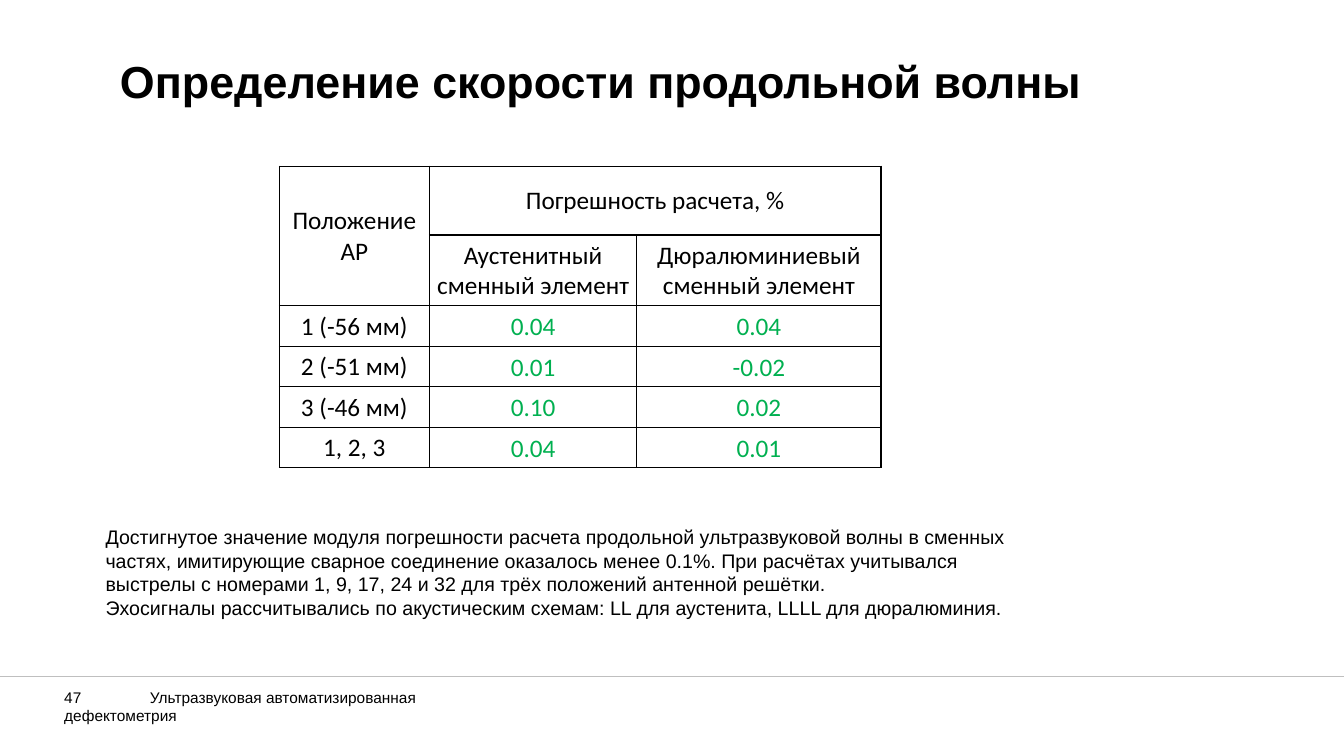
import lxml.etree
import pptx
import pptx.dml.color
import pptx.enum.shapes
import pptx.enum.text
import pptx.oxml.ns
import pptx.util

Cm = pptx.util.Cm
Pt = pptx.util.Pt
Anchor = pptx.enum.text.MSO_ANCHOR
Align = pptx.enum.text.PP_ALIGN
qn = pptx.oxml.ns.qn

BLACK, GREEN, GREY = "000000", "00B050", "BFBFBF"
HEADER_MARGINS = (0.25, 0.13, 0.25, 0.13)
LABEL_MARGINS = (0.03, 0.03, 0.03, 0)
VALUE_MARGINS = (0.18, 0, 0.18, 0)


def color(value):
    return pptx.dml.color.RGBColor.from_string(value)


class SlideBuilder:
    heading_font = "Arial"
    table_font = "Calibri"

    def __init__(self, presentation):
        self.slide = presentation.slides.add_slide(presentation.slide_layouts[5])

    def add_run(self, paragraph, text, size, font, fill=BLACK, bold=False):
        run = paragraph.add_run()
        run.text = text
        run.font.size = Pt(size)
        run.font.name = font
        run.font.bold = bold
        run.font.color.rgb = color(fill)

    def title(self, box, text):
        shape = self.slide.shapes.title
        shape.left, shape.top, shape.width, shape.height = map(Cm, box)
        frame = shape.text_frame
        frame.auto_size = pptx.enum.text.MSO_AUTO_SIZE.NONE
        frame.vertical_anchor = Anchor.BOTTOM
        paragraph = frame.paragraphs[0]
        paragraph.alignment = Align.LEFT
        paragraph.line_spacing = 0.9
        self.add_run(paragraph, text, 32, self.heading_font, bold=True)

    def text(self, box, lines, size, anchor=Anchor.TOP, tab=None):
        frame = self.slide.shapes.add_textbox(*map(Cm, box)).text_frame
        frame.word_wrap = True
        frame.vertical_anchor = anchor
        for index, line in enumerate(lines):
            paragraph = frame.add_paragraph() if index else frame.paragraphs[0]
            if tab:
                properties = paragraph._p.get_or_add_pPr()
                tabs = lxml.etree.SubElement(properties, qn("a:tabLst"))
                lxml.etree.SubElement(tabs, qn("a:tab"), pos=str(Cm(tab)), algn="l")
            self.add_run(paragraph, line, size, self.heading_font)

    def line(self, start, end):
        connector = self.slide.shapes.add_connector(
            pptx.enum.shapes.MSO_CONNECTOR.STRAIGHT, *map(Cm, start + end))
        connector.line.color.rgb = color(GREY)
        connector.line.width = Pt(0.5)
        lxml.etree.SubElement(connector._element.spPr, qn("a:effectLst"))

    def borders(self, cell):
        properties = cell._tc.get_or_add_tcPr()
        for position, side in enumerate(("lnL", "lnR", "lnT", "lnB")):
            border = lxml.etree.Element(qn("a:" + side), w=str(Pt(1)))
            fill = lxml.etree.SubElement(border, qn("a:solidFill"))
            lxml.etree.SubElement(fill, qn("a:srgbClr"), val=BLACK)
            properties.insert(position, border)

    def cell(self, cell, text, margins, fill, spacing):
        cell.fill.background()
        self.borders(cell)
        cell.vertical_anchor = Anchor.MIDDLE
        (cell.margin_left, cell.margin_top,
         cell.margin_right, cell.margin_bottom) = map(Cm, margins)
        paragraph = cell.text_frame.paragraphs[0]
        paragraph.alignment = Align.CENTER
        paragraph.line_spacing = spacing
        if text:
            self.add_run(paragraph, text, 18, self.table_font, fill)

    def table(self, left, top, widths, heights, rows):
        table = self.slide.shapes.add_table(
            len(rows), len(widths), Cm(left), Cm(top),
            Cm(sum(widths)), Cm(sum(heights))).table
        table.first_row = False
        table.horz_banding = False
        for column, width in zip(table.columns, widths):
            column.width = Cm(width)
        for row, height in zip(table.rows, heights):
            row.height = Cm(height)
        for row_index, row in enumerate(rows):
            for column_index, text in enumerate(row):
                is_value = row_index > 1 and column_index > 0
                margins = HEADER_MARGINS if row_index == 0 else LABEL_MARGINS
                self.cell(table.cell(row_index, column_index), text,
                          VALUE_MARGINS if is_value else margins,
                          GREEN if is_value else BLACK,
                          1.07 if is_value else 1.0)
        table.cell(0, 0).merge(table.cell(1, 0))
        table.cell(0, 1).merge(table.cell(0, 2))


def main():
    presentation = pptx.Presentation()
    presentation.slide_width = Cm(33.87)
    presentation.slide_height = Cm(19.05)
    builder = SlideBuilder(presentation)

    builder.text((1.37, 17.65, 12.2, 0.74),
                 ["47\tУльтразвуковая автоматизированная дефектометрия"],
                 11, Anchor.BOTTOM, tab=2.16)
    builder.line((0, 17.04), (33.87, 17.04))
    builder.title((2.77, -0.33, 28.42, 3.18), "Определение скорости продольной волны")
    builder.table(7.04, 4.19, (3.78, 5.23, 6.15), (1.73, 1.45) + (1.02,) * 4, [
        ("Положение АР", "Погрешность расчета, %", ""),
        ("", "Аустенитный сменный элемент", "Дюралюминиевый сменный элемент"),
        ("1 (-56 мм)", "0.04", "0.04"),
        ("2 (-51 мм)", "0.01", "-0.02"),
        ("3 (-46 мм)", "0.10", "0.02"),
        ("1, 2, 3", "0.04", "0.01"),
    ])
    builder.text((2.41, 13.11, 24, 4.93), [
        "Достигнутое значение модуля погрешности расчета продольной ультразвуковой "
        "волны в сменных частях, имитирующие сварное соединение оказалось менее 0.1%. "
        "При расчётах учитывался выстрелы с номерами 1, 9, 17, 24 и 32 для трёх "
        "положений антенной решётки.",
        "Эхосигналы рассчитывались по акустическим схемам: LL для аустенита, "
        "LLLL для дюралюминия.",
    ], 14)
    presentation.save("out.pptx")


if __name__ == "__main__":
    main()
